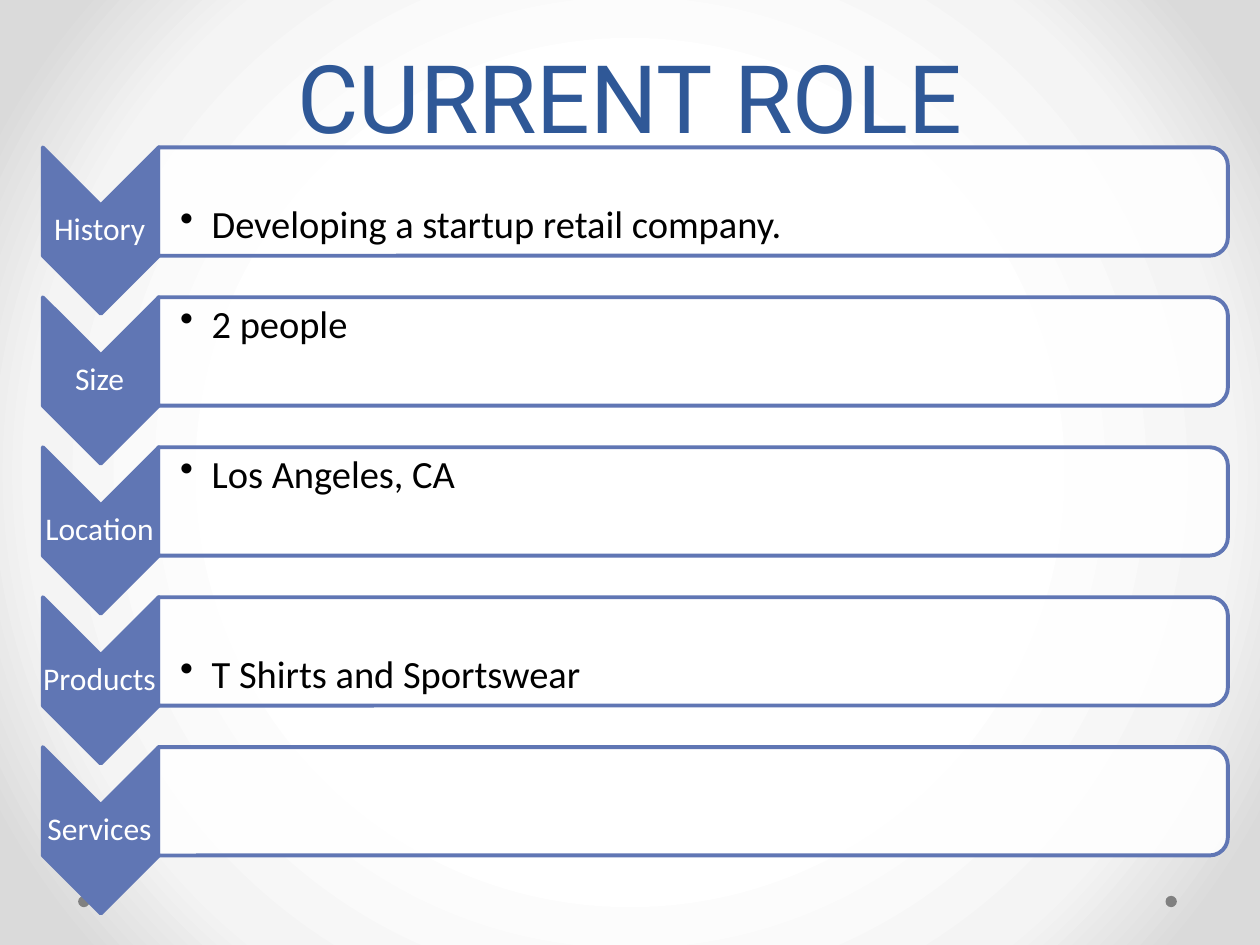
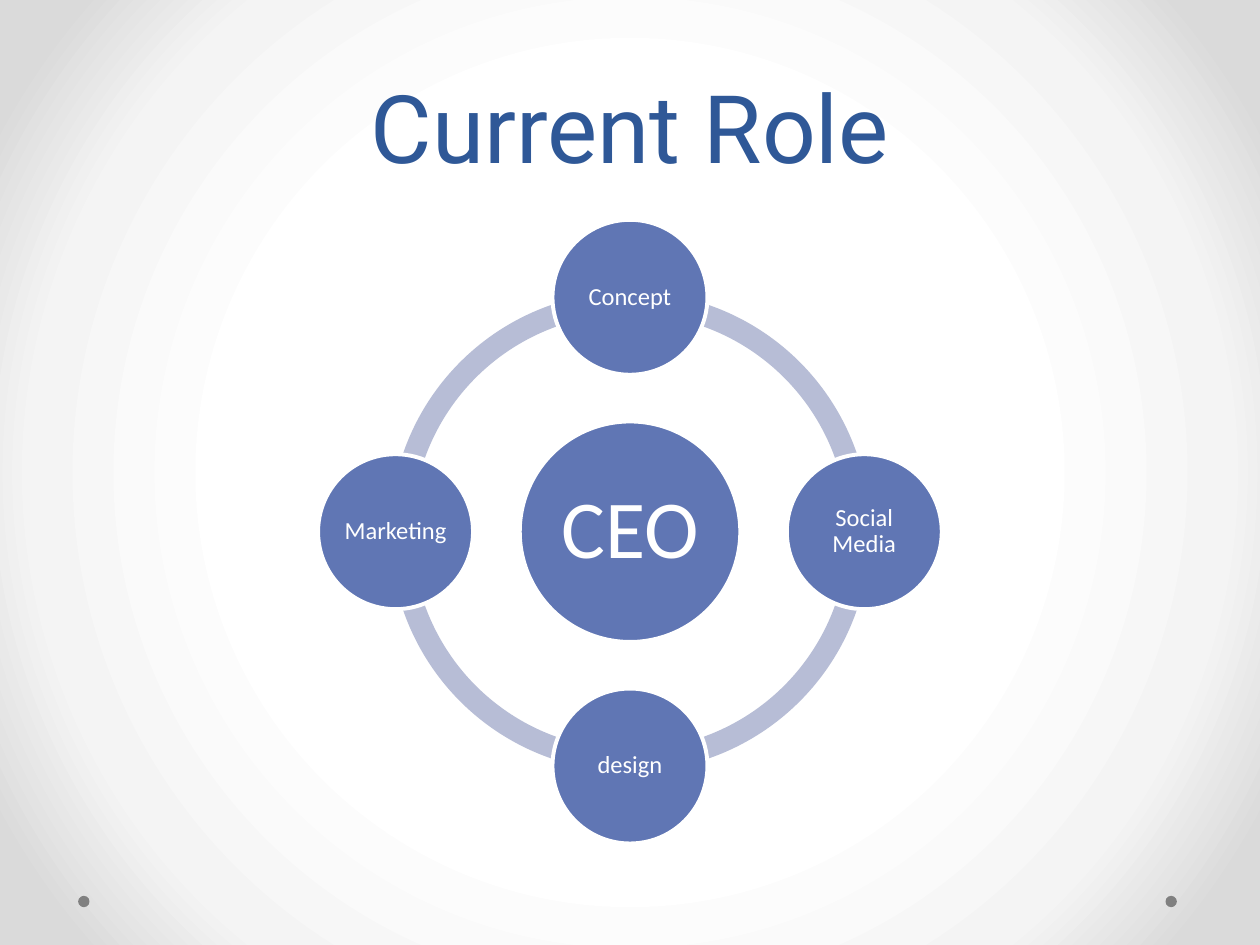
import math

import lxml.etree
import pptx
import pptx.dml.color
import pptx.enum.shapes
import pptx.enum.text
import pptx.oxml.ns
import pptx.util

Inches = pptx.util.Inches
Pt = pptx.util.Pt
qn = pptx.oxml.ns.qn
SHAPES = pptx.enum.shapes.MSO_SHAPE
ANCHOR = pptx.enum.text.MSO_ANCHOR
ALIGN = pptx.enum.text.PP_ALIGN

TITLE_BLUE = "2F5897"
ACCENT = "6076B4"
RING = "B7BDD6"
DOT = "808080"
WHITE = "FFFFFF"
BLACK = "000000"
BACKDROP = [(50, WHITE), (76, "F4F4F4"), (92, "DADADA")]

ROWS = [
    ("History", "Developing a startup retail company.", ANCHOR.BOTTOM),
    ("Size", "2 people", ANCHOR.TOP),
    ("Location", "Los Angeles, CA", ANCHOR.TOP),
    ("Products", "T Shirts and Sportswear", ANCHOR.BOTTOM),
    ("Services", None, None),
]
ROW_TOP, ROW_PITCH = 1.17, 1.19
DUTIES = ["Concept", "Social Media", "design", "Marketing"]
HUB_X, HUB_Y, ORBIT = 5, 4.22, 1.86


def rgb(code):
    return pptx.dml.color.RGBColor.from_string(code)


def add_child(parent, tag, **attributes):
    child = lxml.etree.SubElement(parent, qn(tag))
    for key, value in attributes.items():
        child.set(key, str(value))
    return child


def paint_backdrop(slide):
    slide.background.fill.gradient()
    gradient = slide.element.find(".//" + qn("a:gradFill"))
    gradient.clear()
    stops = add_child(gradient, "a:gsLst")
    for percent, color in BACKDROP:
        stop = add_child(stops, "a:gs", pos=percent * 1000)
        add_child(stop, "a:srgbClr", val=color)
    focus = add_child(gradient, "a:path", path="circle")
    add_child(focus, "a:fillToRect", l=50000, t=50000, r=50000, b=50000)


def add_figure(slide, kind, box, fill, line=None):
    figure = slide.shapes.add_shape(kind, *map(Inches, box))
    figure.shadow.inherit = False
    figure.fill.solid()
    figure.fill.fore_color.rgb = rgb(fill)
    if line:
        figure.line.color.rgb = rgb(line)
        figure.line.width = Pt(2.25)
    else:
        figure.line.fill.background()
    return figure


def centered_box(x, y, width, height):
    return x - width / 2, y - height / 2, width, height


def write(figure, text, size, color, font="Calibri", align=ALIGN.CENTER,
          anchor=ANCHOR.MIDDLE, insets=(0, 0, 0, 0), spacing=0.9):
    frame = figure.text_frame
    frame.text = text
    frame.word_wrap = True
    frame.vertical_anchor = anchor
    (frame.margin_left, frame.margin_top,
     frame.margin_right, frame.margin_bottom) = map(Inches, insets)
    paragraph = frame.paragraphs[0]
    paragraph.alignment = align
    paragraph.line_spacing = spacing
    run_font = paragraph.runs[0].font
    run_font.name = font
    run_font.size = Pt(size)
    run_font.color.rgb = rgb(color)
    return paragraph


def add_text(slide, box, text, size, color, **style):
    return write(slide.shapes.add_textbox(*map(Inches, box)),
                 text, size, color, **style)


def add_bullet(paragraph):
    properties = paragraph._p.get_or_add_pPr()
    properties.set("marL", str(Inches(0.25)))
    properties.set("indent", str(Inches(-0.25)))
    add_child(properties, "a:buChar", char="•")


def start_slide(deck, title, title_box):
    slide = deck.slides.add_slide(deck.slide_layouts[6])
    paint_backdrop(slide)
    for left in (9.25, 0.62):
        add_figure(slide, SHAPES.OVAL, (left, 7.11, 0.09, 0.09), DOT)
    add_text(slide, title_box, title, 54, TITLE_BLUE, font="Roboto",
             anchor=ANCHOR.BOTTOM, insets=(0.1, 0.05, 0.1, 0.05),
             spacing=Pt(58))
    return slide


def add_row(slide, top, label, detail, anchor):
    chevron = add_figure(slide, SHAPES.CHEVRON,
                         centered_box(0.8, top + 0.66, 1.32, 0.92), ACCENT, ACCENT)
    chevron.rotation = 90
    add_text(slide, (0.33, top + 0.46, 0.92, 0.4), label, 18, WHITE)

    band = add_figure(slide, SHAPES.ROUND_2_SAME_RECTANGLE,
                      centered_box(5.5, top + 0.43, 0.86, 8.49), WHITE, ACCENT)
    band.rotation = 90
    band_color = band.fill._xPr.find(qn("a:solidFill"))[0]
    add_child(band_color, "a:alpha", val=90000)
    if detail:
        add_bullet(add_text(slide, (1.26, top + 0.04, 8.45, 0.77), detail, 22, BLACK,
                            align=ALIGN.LEFT, anchor=anchor,
                            insets=(0.17, 0.02, 0.02, 0.02)))


def add_ring_quarter(slide, start):
    arc = add_figure(slide, SHAPES.BLOCK_ARC,
                     centered_box(HUB_X, HUB_Y, 3.81, 3.81), RING)
    arc.adjustments[0] = start
    arc.adjustments[1] = (start + 54) % 216
    arc.adjustments[2] = 0.046


def add_circle(slide, x, y, diameter, text, size, inset):
    circle = add_figure(slide, SHAPES.OVAL,
                        centered_box(x, y, diameter, diameter), ACCENT, WHITE)
    write(circle, text, size, WHITE, insets=(inset,) * 4)


def build_company_slide(deck):
    slide = start_slide(deck, "CURRENT ROLE", (0.5, 0.01, 9, 1.25))
    for index, row in enumerate(ROWS):
        add_row(slide, ROW_TOP + index * ROW_PITCH, *row)


def build_duties_slide(deck):
    slide = start_slide(deck, "Current Role", (0.5, 0.17, 9, 1.33))
    for quarter in range(4):
        add_ring_quarter(slide, quarter * 54)
    add_circle(slide, HUB_X, HUB_Y, 1.75, "CEO", 47, 0.07)
    for index, duty in enumerate(DUTIES):
        angle = index * math.tau / len(DUTIES)
        add_circle(slide, HUB_X + ORBIT * math.sin(angle),
                   HUB_Y - ORBIT * math.cos(angle), 1.23, duty, 14, 0.02)


def main():
    deck = pptx.Presentation()
    deck.slide_width = Inches(10)
    deck.slide_height = Inches(7.5)
    build_company_slide(deck)
    build_duties_slide(deck)
    deck.save("out.pptx")


if __name__ == "__main__":
    main()
